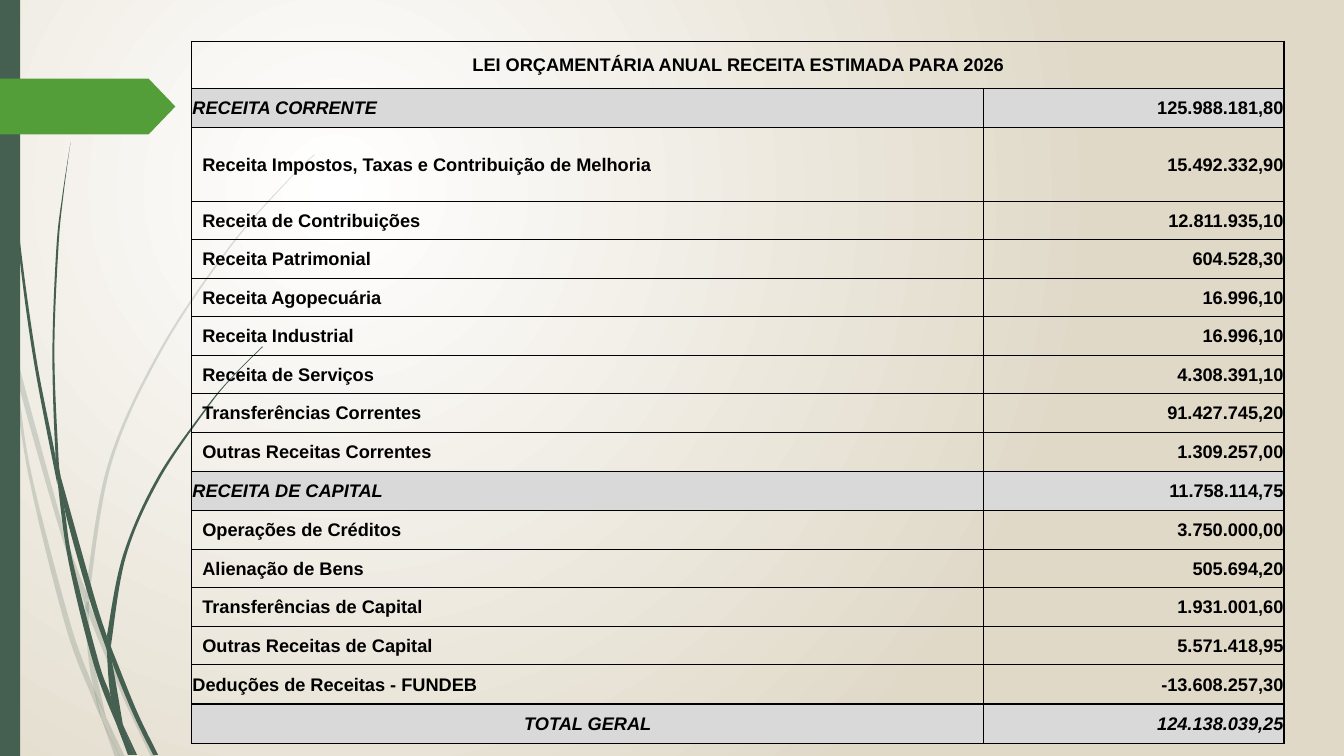
from dataclasses import dataclass

from lxml.etree import SubElement
from pptx import Presentation
from pptx.dml.color import RGBColor
from pptx.enum.shapes import MSO_SHAPE as Preset
from pptx.enum.text import MSO_ANCHOR as Anchor, PP_ALIGN as Align
from pptx.oxml import parse_xml
from pptx.oxml.ns import nsdecls, qn
from pptx.util import Cm, Pt

PINE, LEAF, GREY, BLACK = "455F51", "549E39", "D9D9D9", "000000"
WHITE, SAND = "FFFFFF", "E0D9C8"
CM_PER_INCH = 2.54
Points = list[tuple[float, float]]


@dataclass
class Blade:
    """A piece of grass: its two long edges, from top to root, in inches."""
    left: Points
    right: Points


@dataclass
class Revenue:
    label: str
    amount: str
    kind: str = "item"  # item, group, deduction or total
    height: float = 0.97

    @property
    def shaded(self) -> bool:
        return self.kind in ("group", "total")


PALE_GRASS = [
    Blade([(0, 2.82), (0.09, 3.22), (0.11, 3.5)], [(0, 2.99), (0.1, 3.44), (0.11, 3.5)]),
    Blade([(0.14, 3.45), (0.17, 3.76), (0.58, 5.22), (0.84, 5.99)], [(0.14, 3.45), (0.62, 5.2), (0.85, 5.86)]),
    Blade([(0.88, 5.96), (0.88, 6.1), (1.23, 6.94), (1.5, 7.51)],
          [(0.88, 5.96), (0.92, 6.07), (1.27, 6.92), (1.55, 7.51)]),
    Blade([(1.05, 7.11), (1.19, 7.51)], [(1.05, 7.11), (1.24, 7.51)]),
    Blade([(0.11, 3.5), (0.28, 4.7), (0.65, 6.21), (0.92, 6.93), (1.01, 7.14)],
          [(0.11, 3.5), (0.17, 3.76), (0.31, 4.69), (0.7, 6.19), (0.93, 6.83), (1.01, 7.14)]),
    Blade([(0.84, 5.99), (0.87, 6.46), (0.93, 6.83), (1.05, 7.11)],
          [(0.84, 5.99), (0.88, 6.1), (0.91, 6.46), (1.05, 7.11)]),
    Blade([(3.12, 1.53), (2.89, 1.75), (2.28, 2.44), (1.58, 3.48), (1.07, 4.61), (0.85, 5.86)],
          [(3.12, 1.54), (2.9, 1.75), (2.29, 2.45), (1.6, 3.49), (1.1, 4.62), (0.88, 5.96)]),
    Blade([(1.01, 7.14), (1.14, 7.51)], [(1.01, 7.14), (1.19, 7.51)]),
    Blade([(0.85, 5.86), (0.84, 5.99), (0.88, 6.1)], [(0.85, 5.86), (0.88, 5.96), (0.88, 6.1)]),
    Blade([(0.93, 6.83), (1.01, 7.14), (1.19, 7.51)], [(0.93, 6.83), (1.05, 7.11), (1.19, 7.51)]),
]
DARK_GRASS = [
    Blade([(0.03, 0), (0.07, 1.1), (0.17, 2.33), (0.33, 3.55), (0.57, 4.81)],
          [(0.04, 0), (0.08, 1.09), (0.19, 2.32), (0.36, 3.55), (0.55, 4.53), (0.57, 4.81)]),
    Blade([(0.6, 4.72), (0.64, 5.05), (0.88, 5.92), (1.06, 6.45)], [(0.6, 4.72), (0.93, 5.9), (1.06, 6.31)]),
    Blade([(1.1, 6.41), (1.11, 6.56), (1.32, 7.08), (1.52, 7.49)],
          [(1.1, 6.41), (1.13, 6.49), (1.36, 7.06), (1.57, 7.49)]),
    Blade([(0.57, 4.77), (0.68, 5.57), (0.93, 6.59), (1.17, 7.22)],
          [(0.57, 4.77), (0.64, 5.05), (0.72, 5.56), (0.98, 6.57), (1.1, 6.91), (1.17, 7.22)]),
    Blade([(0.7, 1.41), (0.62, 1.93), (0.56, 2.45), (0.52, 3.49), (0.55, 4.49), (0.6, 4.72)],
          [(0.7, 1.41), (0.63, 1.93), (0.58, 2.45), (0.54, 3.49), (0.58, 4.53), (0.6, 4.72)]),
    Blade([(1.22, 7.19), (1.33, 7.49)], [(1.22, 7.19), (1.36, 7.49)]),
    Blade([(0.55, 4.49), (0.57, 4.77), (0.64, 5.05)], [(0.55, 4.49), (0.6, 4.72), (0.64, 5.05)]),
    Blade([(2.6, 3.44), (2.31, 3.73), (2.04, 4.05), (1.56, 4.74), (1.22, 5.51), (1.06, 6.31)],
          [(2.61, 3.44), (2.31, 3.74), (2.05, 4.06), (1.58, 4.76), (1.25, 5.52), (1.1, 6.41)]),
    Blade([(1.17, 7.22), (1.27, 7.49)], [(1.17, 7.22), (1.31, 7.49)]),
    Blade([(1.06, 6.45), (1.1, 6.91), (1.22, 7.19)], [(1.06, 6.45), (1.11, 6.56), (1.22, 7.19)]),
    Blade([(1.06, 6.31), (1.06, 6.45), (1.11, 6.56)], [(1.06, 6.31), (1.1, 6.41), (1.11, 6.56)]),
    Blade([(1.1, 6.91), (1.17, 7.22), (1.3, 7.49)], [(1.1, 6.91), (1.22, 7.19), (1.33, 7.49)]),
]

HEADING = "LEI ORÇAMENTÁRIA ANUAL RECEITA ESTIMADA PARA 2026"
REVENUES = [
    Revenue("RECEITA CORRENTE", "125.988.181,80", "group", 0.99),
    Revenue("Receita Impostos, Taxas e Contribuição de Melhoria", "15.492.332,90", height=1.86),
    Revenue("Receita de Contribuições", "12.811.935,10"),
    Revenue("Receita Patrimonial", "604.528,30"),
    Revenue("Receita Agopecuária", "16.996,10"),
    Revenue("Receita Industrial", "16.996,10"),
    Revenue("Receita de Serviços", "4.308.391,10"),
    Revenue("Transferências Correntes", "91.427.745,20"),
    Revenue("Outras Receitas Correntes", "1.309.257,00", height=0.99),
    Revenue("RECEITA DE CAPITAL", "11.758.114,75", "group", 0.99),
    Revenue("Operações de Créditos", "3.750.000,00"),
    Revenue("Alienação de Bens", "505.694,20"),
    Revenue("Transferências de Capital", "1.931.001,60"),
    Revenue("Outras Receitas de Capital", "5.571.418,95"),
    Revenue("Deduções de Receitas - FUNDEB", "-13.608.257,30", "deduction", 0.99),
    Revenue("TOTAL GERAL", "124.138.039,25", "total", 0.99),
]


def colour(code: str) -> RGBColor:
    return RGBColor.from_string(code)


def apply(target, formats: dict) -> None:
    for name, value in formats.items():
        setattr(target, name, value)


def paint(shape, code: str) -> None:
    shape.fill.solid()
    shape.fill.fore_color.rgb = colour(code)
    shape.line.fill.background()
    shape.shadow.inherit = False


def paint_background(page) -> None:
    fill = page.background.fill
    fill.gradient()
    for stop, code in zip(fill.gradient_stops, (WHITE, SAND)):
        stop.color.rgb = colour(code)
    linear = next(page.background._cSld.iter(qn("a:lin")))
    linear.getparent().replace(linear, parse_xml(
        f'<a:path {nsdecls("a")} path="circle">'
        '<a:fillToRect l="50000" t="50000" r="100000" b="100000"/></a:path>'))


def curve(points: Points) -> Points:
    """Give two handles and an end point for each stretch of a smooth edge."""
    ends = [points[0], *points, points[-1]]
    stretches = []
    for a, b, c, d in zip(ends, ends[1:], ends[2:], ends[3:]):
        leave = (b[0] + (c[0] - a[0]) / 6, b[1] + (c[1] - a[1]) / 6)
        arrive = (c[0] - (d[0] - b[0]) / 6, c[1] - (d[1] - b[1]) / 6)
        stretches += [leave, arrive, c]
    return stretches


def draw_blade(page, blade: Blade, opacity: int) -> None:
    root = blade.right[-1]
    across = [blade.left[-1], root, root]
    edge = [blade.left[0], *curve(blade.left), *across, *curve(blade.right[::-1])]
    outline = [(Cm(x * CM_PER_INCH), Cm(y * CM_PER_INCH)) for x, y in edge]
    builder = page.shapes.build_freeform(*outline[0])
    builder.add_line_segments(outline[1:], close=True)
    shape = builder.convert_to_shape()

    # Each three line steps become one Bézier stretch
    lines = list(shape._element.spPr.iter(qn("a:lnTo")))
    for trio in zip(lines[::3], lines[1::3], lines[2::3]):
        bend = parse_xml(f'<a:cubicBezTo {nsdecls("a")}/>')
        trio[0].addprevious(bend)
        for line in trio:
            bend.append(line[0])
            line.getparent().remove(line)

    paint(shape, PINE)
    if opacity < 100:
        tone = next(shape._element.spPr.iter(qn("a:srgbClr")))
        SubElement(tone, qn("a:alpha"), val=str(opacity * 1000))


def set_borders(cell, top: float, bottom: float) -> None:
    props = cell._tc.get_or_add_tcPr()
    sides = {"L": 1, "R": 1, "T": top, "B": bottom}
    for position, (side, width) in enumerate(sides.items()):
        props.insert(position, parse_xml(
            f'<a:ln{side} {nsdecls("a")} w="{Pt(width)}"><a:solidFill>'
            f'<a:srgbClr val="{BLACK}"/></a:solidFill></a:ln{side}>'))


def fill_cell(cell, text: str, align: Align, shaded=False, italic=False, indent=0.02) -> None:
    apply(cell, {"vertical_anchor": Anchor.MIDDLE, "margin_left": Cm(indent),
                 "margin_right": Cm(0.02), "margin_top": Cm(0.02), "margin_bottom": 0})
    if shaded:
        cell.fill.solid()
        cell.fill.fore_color.rgb = colour(GREY)
    else:
        cell.fill.background()
    para = cell.text_frame.paragraphs[0]
    para.alignment = align
    if text:
        span = para.add_run()
        span.text = text
        apply(span.font, {"name": "Arial", "size": Pt(13), "bold": True, "italic": italic})
        span.font.color.rgb = colour(BLACK)


def draw_table(page) -> None:
    widths, heights = (19.96, 7.57), [1.18] + [item.height for item in REVENUES]
    table = page.shapes.add_table(len(heights), len(widths), Cm(4.83), Cm(1.04),
                                  Cm(sum(widths)), Cm(sum(heights))).table
    apply(table, {"first_row": False, "horz_banding": False})
    for column, width in zip(table.columns, widths):
        column.width = Cm(width)
    for row, height in zip(table.rows, heights):
        row.height = Cm(height)

    # Heading across both columns
    for cell, text in zip(table.rows[0].cells, (HEADING, "")):
        fill_cell(cell, text, Align.CENTER)
    table.cell(0, 0).merge(table.cell(0, 1))

    # Revenue lines
    for number, item in enumerate(REVENUES, start=1):
        label, amount = table.rows[number].cells
        total = item.kind == "total"
        fill_cell(label, item.label, Align.CENTER if total else Align.LEFT, item.shaded,
                  item.shaded, 0.27 if item.kind == "item" else 0.02)
        fill_cell(amount, item.amount, Align.RIGHT, item.shaded, total)

    # Heavier rules around the heading and the shaded rows
    heavy = [True] + [item.shaded for item in REVENUES]
    for number, row in enumerate(table.rows):
        top = any(heavy[max(number - 1, 0):number + 1])
        bottom = any(heavy[number:number + 2])
        for cell in row.cells:
            set_borders(cell, 1 if top else 0.5, 1 if bottom else 0.5)


def main() -> None:
    deck = Presentation()
    apply(deck, {"slide_width": Cm(33.87), "slide_height": Cm(19.05)})
    page = deck.slides.add_slide(deck.slide_layouts[6])
    paint_background(page)

    # Grass, side band and arrow tab
    for grass, opacity in ((PALE_GRASS, 20), (DARK_GRASS, 100)):
        for blade in grass:
            draw_blade(page, blade, opacity)
    band = page.shapes.add_shape(Preset.RECTANGLE, 0, 0, Cm(0.51), deck.slide_height)
    paint(band, PINE)
    tab = page.shapes.add_shape(Preset.PENTAGON, 0, Cm(1.98), Cm(4.42), Cm(1.41))
    tab.adjustments[0] = 0.48
    paint(tab, LEAF)

    draw_table(page)
    deck.save("out.pptx")


if __name__ == "__main__":
    main()
